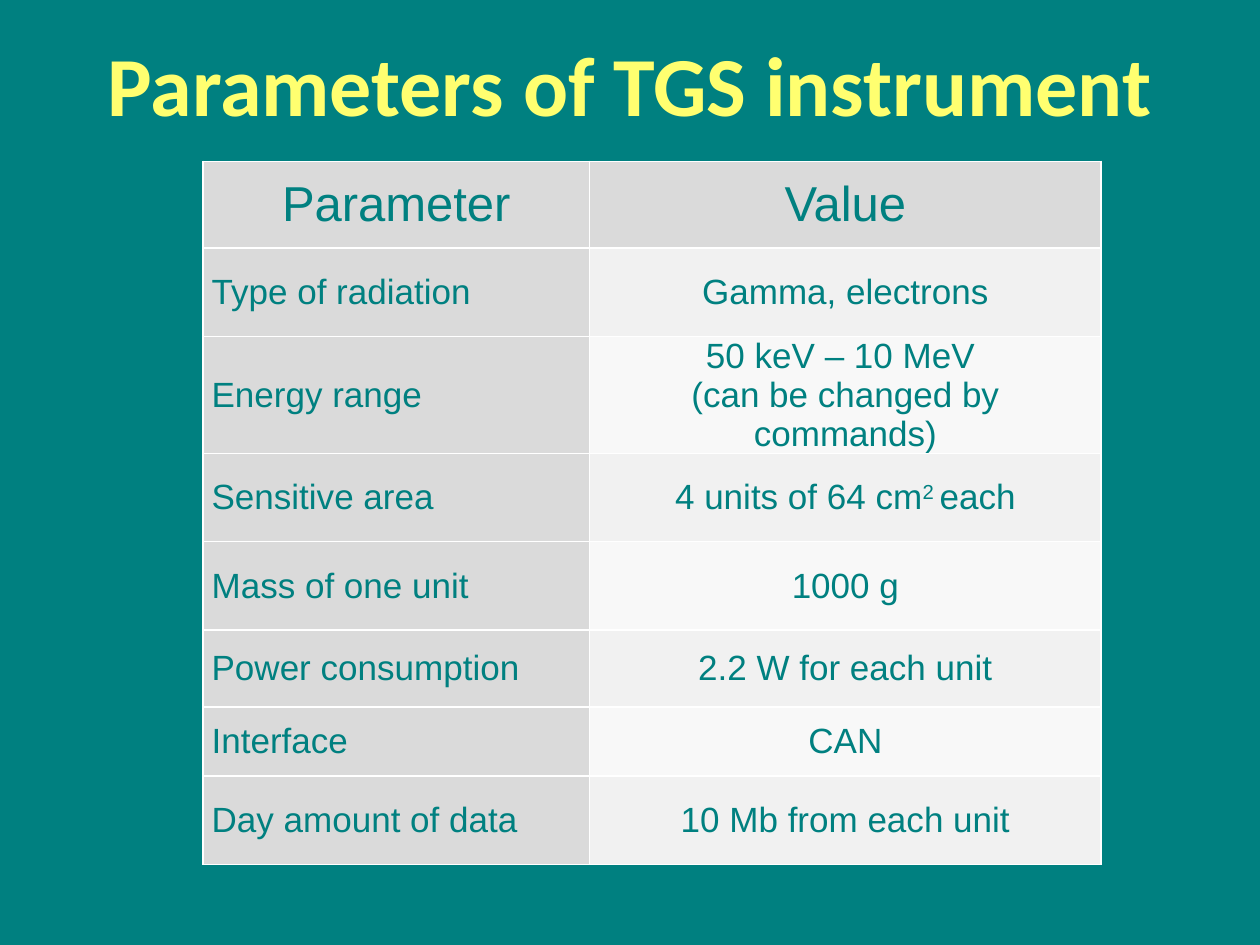
import pptx
import pptx.util
import pptx.dml.color
import pptx.enum.text
import pptx.oxml.ns
from lxml import etree

WIDTH, HEIGHT = 10, 7.5
TEAL, YELLOW, WHITE = "008080", "FFFF70", "FFFFFF"
HEADING_FILL, ODD_FILL, EVEN_FILL = "DADADA", "F1F1F1", "F8F8F8"
COLUMN_WIDTHS = [3.07, 4.06]
ROW_HEIGHTS = [0.69, 0.7, 0.93, 0.7, 0.7, 0.61, 0.55, 0.7]
PARAMETERS = [
    ("Parameter", ["Value"]),
    ("Type of radiation", ["Gamma, electrons"]),
    ("Energy range", ["50 keV – 10 MeV ", "(can be changed by commands)"]),
    ("Sensitive area", ["4 units of 64 cm^2 ^each"]),
    ("Mass of one unit", ["1000 g"]),
    ("Power consumption", ["2.2 W for each unit"]),
    ("Interface", ["CAN"]),
    ("Day amount of data", ["10 Mb from each unit"]),
]


def color(value):
    return pptx.dml.color.RGBColor.from_string(value)


def paint(target, value):
    target.solid()
    target.fore_color.rgb = color(value)


def style_font(font, name, size, value, bold=False):
    font.name = name
    font.size = pptx.util.Pt(size)
    font.bold = bold
    font.color.rgb = color(value)


def set_title(slide, wording):
    title = slide.shapes.title
    title.left, title.top = pptx.util.Inches(WIDTH * 0.05), pptx.util.Inches(0.03)
    title.width, title.height = pptx.util.Inches(WIDTH * 0.9), pptx.util.Inches(1.25)
    title.text_frame.text = wording
    title.text_frame.vertical_anchor = pptx.enum.text.MSO_ANCHOR.MIDDLE
    heading = title.text_frame.paragraphs[0]
    heading.alignment = pptx.enum.text.PP_ALIGN.CENTER
    style_font(heading.runs[0].font, "Calibri", 48, YELLOW, bold=True)


def add_borders(cell):
    properties = cell._tc.get_or_add_tcPr()
    for side in ("a:lnL", "a:lnR", "a:lnT", "a:lnB"):
        border = etree.SubElement(properties, pptx.oxml.ns.qn(side), w=str(pptx.util.Pt(1)))
        fill = etree.SubElement(border, pptx.oxml.ns.qn("a:solidFill"))
        etree.SubElement(fill, pptx.oxml.ns.qn("a:srgbClr"), val=WHITE)


def write_line(paragraph, wording, size, alignment):
    paragraph.alignment = alignment
    for index, part in enumerate(wording.split("^")):
        run = paragraph.add_run()
        run.text = part
        style_font(run.font, "Arial", size, TEAL)
        if index % 2:
            run._r.get_or_add_rPr().set("baseline", "30000")


def fill_cell(cell, lines, size, alignment, background):
    cell.margin_left = cell.margin_right = pptx.util.Inches(0.07)
    cell.margin_top = cell.margin_bottom = 0
    cell.vertical_anchor = pptx.enum.text.MSO_ANCHOR.MIDDLE
    add_borders(cell)
    paint(cell.fill, background)
    frame = cell.text_frame
    for index, line in enumerate(lines):
        paragraph = frame.add_paragraph() if index else frame.paragraphs[0]
        write_line(paragraph, line, size, alignment)


def add_parameter_table(slide, left, top):
    frame = slide.shapes.add_table(
        len(PARAMETERS), len(COLUMN_WIDTHS),
        pptx.util.Inches(left), pptx.util.Inches(top),
        pptx.util.Inches(sum(COLUMN_WIDTHS)), pptx.util.Inches(sum(ROW_HEIGHTS)))
    table = frame.table
    for column, width in zip(table.columns, COLUMN_WIDTHS):
        column.width = pptx.util.Inches(width)
    for row, height in zip(table.rows, ROW_HEIGHTS):
        row.height = pptx.util.Inches(height)
    align = pptx.enum.text.PP_ALIGN
    for index, (parameter, value_lines) in enumerate(PARAMETERS):
        is_header = index == 0
        size = 28 if is_header else 20
        value_fill = HEADING_FILL if is_header else (ODD_FILL if index % 2 else EVEN_FILL)
        fill_cell(table.cell(index, 0), [parameter], size,
                  align.CENTER if is_header else align.LEFT, HEADING_FILL)
        fill_cell(table.cell(index, 1), value_lines, size, align.CENTER, value_fill)


def main():
    deck = pptx.Presentation()
    deck.slide_width = pptx.util.Inches(WIDTH)
    deck.slide_height = pptx.util.Inches(HEIGHT)
    slide = deck.slides.add_slide(deck.slide_layouts[5])
    paint(slide.background.fill, TEAL)
    set_title(slide, "Parameters of TGS instrument")
    add_parameter_table(slide, 1.61, 1.28)
    deck.save("out.pptx")


if __name__ == "__main__":
    main()
